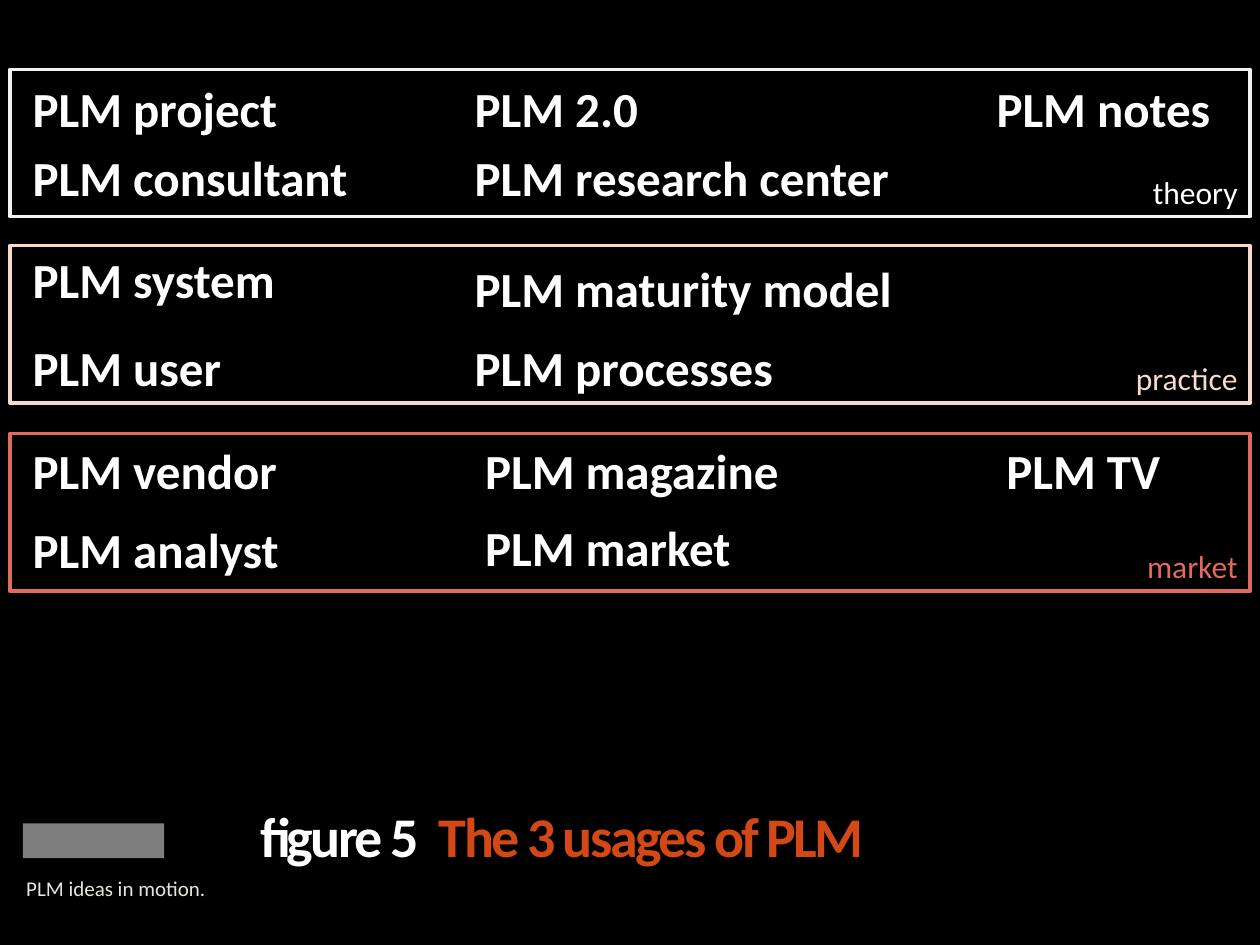
from dataclasses import dataclass

from pptx import Presentation
from pptx.dml.color import RGBColor
from pptx.enum.shapes import MSO_SHAPE
from pptx.enum.text import MSO_ANCHOR, PP_ALIGN
from pptx.util import Cm, Pt


@dataclass(frozen=True)
class Theme:
    font: str = "Calibri"
    background: str = "000000"
    text: str = "FFFFFF"
    accent: str = "D34817"
    tagline: str = "E9E5DC"
    emblem: str = "7F7F7F"
    theory: str = "F2F2F2"
    practice: str = "FAD9CD"
    market: str = "DF6C5D"
    term_size: int = 28
    band_size: int = 18
    title_size: int = 32
    tagline_size: int = 12


THEME = Theme()
BAND_LEFT, BAND_WIDTH = 0.2, 25
TERM_HEIGHT = 1.45

# Label, outline colour, label colour, top, height
BANDS = [
    ("theory", THEME.theory, THEME.text, 1.4, 2.97),
    ("practice", THEME.practice, THEME.practice, 4.95, 3.18),
    ("market", THEME.market, THEME.market, 8.74, 3.18),
]

# Column left, column width, terms with their tops
TERM_COLUMNS = [
    (0.41, 9.53, [("PLM project", 1.45), ("PLM consultant", 2.84),
                  ("PLM system", 4.9), ("PLM user", 6.68),
                  ("PLM vendor", 8.74), ("PLM analyst", 10.34)]),
    (9.32, 12.29, [("PLM 2.0", 1.45), ("PLM research center", 2.84),
                   ("PLM maturity model", 5.08), ("PLM processes", 6.68)]),
    (9.53, 8.94, [("PLM magazine", 8.74), ("PLM market", 10.31)]),
    (19.84, 5.36, [("PLM notes", 1.45)]),
    (20.04, 3.96, [("PLM TV", 8.74)]),
]


def style_paragraph(paragraph, size, color=None, bold=False):
    font = paragraph.font
    font.name, font.size, font.bold = THEME.font, Pt(size), bold
    if color:
        font.color.rgb = RGBColor.from_string(color)


def add_text(slide, box, size, anchor, text="", color=None, bold=False):
    """Add a wrapped one-paragraph text box; box is left, top, width, height in cm."""
    frame = slide.shapes.add_textbox(*map(Cm, box)).text_frame
    frame.word_wrap = True
    frame.vertical_anchor = anchor
    paragraph = frame.paragraphs[0]
    paragraph.text = text
    style_paragraph(paragraph, size, color, bold)
    return frame


def add_rectangle(slide, box):
    shape = slide.shapes.add_shape(MSO_SHAPE.RECTANGLE, *map(Cm, box))
    shape.shadow.inherit = False
    return shape


def add_band(slide, label, line_color, label_color, top, height):
    shape = add_rectangle(slide, (BAND_LEFT, top, BAND_WIDTH, height))
    shape.fill.background()
    shape.line.color.rgb = RGBColor.from_string(line_color)
    shape.line.width = Pt(2)
    shape.text_frame.vertical_anchor = MSO_ANCHOR.BOTTOM
    paragraph = shape.text_frame.paragraphs[0]
    paragraph.text = label
    paragraph.alignment = PP_ALIGN.RIGHT
    style_paragraph(paragraph, THEME.band_size, label_color)


def add_emblem(slide):
    shape = add_rectangle(slide, (0.46, 16.6, 2.85, 0.7))
    shape.fill.solid()
    shape.fill.fore_color.rgb = RGBColor.from_string(THEME.emblem)
    shape.line.fill.background()


def add_title(slide):
    frame = add_text(slide, (5, 15.01, 20.24, 2.62), THEME.title_size,
                     MSO_ANCHOR.BOTTOM, bold=True)
    for text, color in (("figure 5 ", THEME.text),
                        (" The 3 usages of PLM", THEME.accent)):
        run = frame.paragraphs[0].add_run()
        run.text = text
        run.font.color.rgb = RGBColor.from_string(color)
        run.font._element.set("spc", "-150")


def add_tagline(slide):
    frame = add_text(slide, (0.2, 17.53, 4.37, 0.94), THEME.tagline_size,
                     MSO_ANCHOR.TOP, "PLM ideas in motion.", THEME.tagline)
    frame.margin_left = Cm(0.33)


def main():
    presentation = Presentation()
    presentation.slide_width, presentation.slide_height = Cm(25.4), Cm(19.05)
    slide = presentation.slides.add_slide(presentation.slide_layouts[6])
    slide.background.fill.solid()
    slide.background.fill.fore_color.rgb = RGBColor.from_string(THEME.background)

    for left, width, terms in TERM_COLUMNS:
        for term, top in terms:
            add_text(slide, (left, top, width, TERM_HEIGHT), THEME.term_size,
                     MSO_ANCHOR.MIDDLE, term, THEME.text, bold=True)
    for band in BANDS:
        add_band(slide, *band)

    add_title(slide)
    add_tagline(slide)
    add_emblem(slide)

    presentation.save("out.pptx")


if __name__ == "__main__":
    main()
